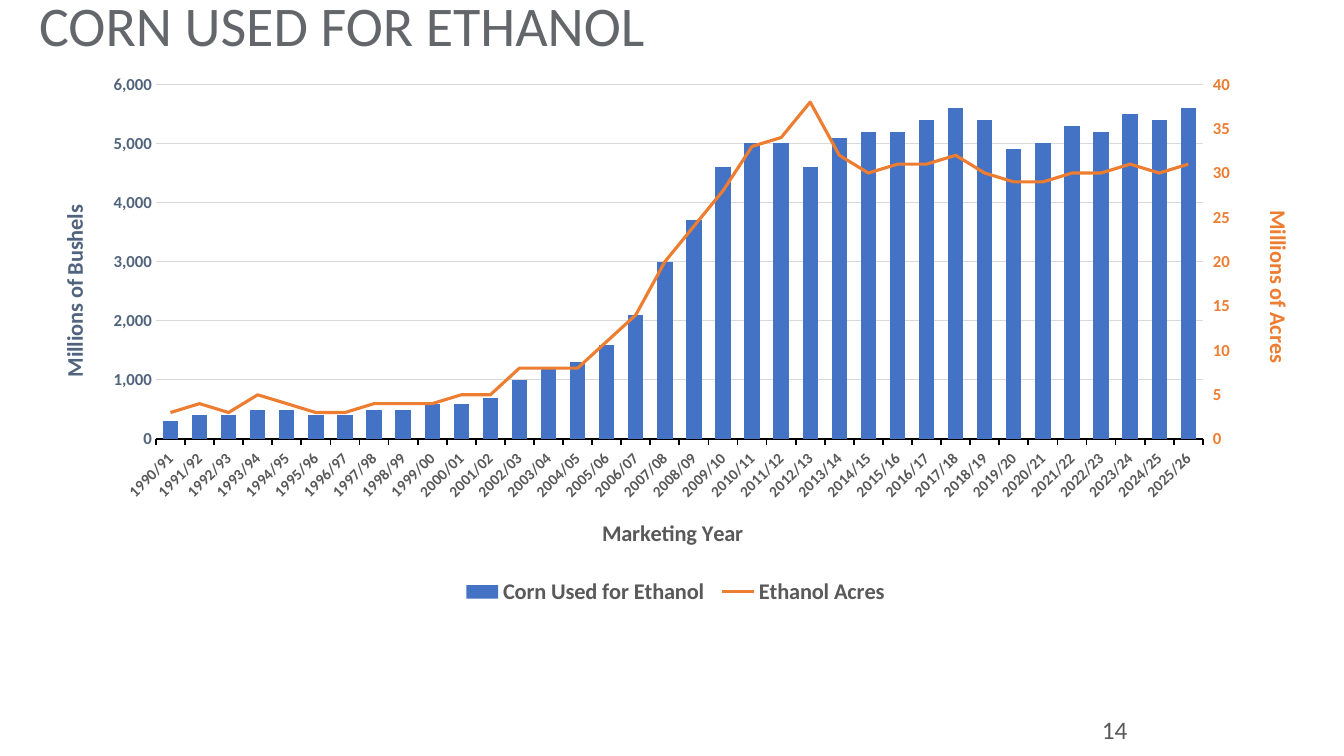
import pptx
import pptx.chart.axis
import pptx.chart.data
import pptx.dml.color
import pptx.enum.chart
import pptx.enum.text
import pptx.oxml
import pptx.oxml.ns
import pptx.util

Inches = pptx.util.Inches
Pt = pptx.util.Pt
RGBColor = pptx.dml.color.RGBColor
XL = pptx.enum.chart
ANCHOR = pptx.enum.text.MSO_ANCHOR

TITLE_GREY = RGBColor(0x63, 0x66, 0x6A)
TEXT_GREY = RGBColor(0x59, 0x59, 0x59)
GRID_GREY = RGBColor(0xD9, 0xD9, 0xD9)
SLATE = RGBColor(0x51, 0x64, 0x7E)
BLUE = RGBColor(0x44, 0x72, 0xC4)
ORANGE = RGBColor(0xED, 0x7D, 0x31)
BLACK = RGBColor(0, 0, 0)

YEARS = [f"{y}/{(y + 1) % 100:02d}" for y in range(1990, 2026)]
BUSHELS = [
    300, 400, 400, 500, 500, 400, 400, 500, 500, 600, 600, 700,
    1000, 1200, 1300, 1600, 2100, 3000, 3700, 4600, 5000, 5000, 4600, 5100,
    5200, 5200, 5400, 5600, 5400, 4900, 5000, 5300, 5200, 5500, 5400, 5600,
]
ACRES = [
    3, 4, 3, 5, 4, 3, 3, 4, 4, 4, 5, 5,
    8, 8, 8, 11, 14, 20, 24, 28, 33, 34, 38, 32,
    30, 31, 31, 32, 30, 29, 29, 30, 30, 31, 30, 31,
]

NS = pptx.oxml.ns.nsdecls("c")
LINE_PLOT = f"""<c:lineChart {NS}><c:grouping val="standard"/><c:varyColors val="0"/>
<c:marker val="1"/><c:axId val="501"/><c:axId val="502"/></c:lineChart>"""
HIDDEN_AXIS = f"""<c:catAx {NS}><c:axId val="501"/><c:scaling/><c:delete val="1"/>
<c:axPos val="b"/><c:crossAx val="502"/></c:catAx>"""
RIGHT_AXIS = f"""<c:valAx {NS}><c:axId val="502"/><c:scaling/><c:delete val="0"/>
<c:axPos val="r"/><c:numFmt formatCode="General" sourceLinked="0"/>
<c:majorTickMark val="out"/><c:minorTickMark val="none"/><c:tickLblPos val="nextTo"/>
<c:crossAx val="501"/><c:crosses val="max"/></c:valAx>"""


def set_all(obj, values):
    for name, value in values.items():
        setattr(obj, name, value)


def set_font(font, size, color, bold=False):
    set_all(font, {"name": "Calibri", "size": Pt(size), "bold": bold})
    font.color.rgb = color


def set_line(line, color, width):
    line.color.rgb = color
    line.width = Pt(width)


def place(element, x, y, w=None, h=None, inner=False):
    for old in element.xpath("c:layout"):
        element.remove(old)
    parts = {"xMode": "edge", "yMode": "edge", "x": x, "y": y, "w": w, "h": h}
    body = '<c:layoutTarget val="inner"/>' if inner else ""
    body += "".join(f'<c:{k} val="{v}"/>' for k, v in parts.items() if v is not None)
    layout = pptx.oxml.parse_xml(
        f"<c:layout {NS}><c:manualLayout>{body}</c:manualLayout></c:layout>")
    overlay = element.xpath("c:overlay")
    if overlay:
        overlay[0].addprevious(layout)
    else:
        element.insert(0, layout)


def add_text(s, box, text, size, color, anchor, **spacing):
    tf = s.shapes.add_textbox(*map(Inches, box)).text_frame
    set_all(tf, {"word_wrap": True, "vertical_anchor": anchor})
    p = tf.paragraphs[0]
    set_all(p, {"line_spacing": 0.9, **spacing})
    r = p.add_run()
    r.text = text
    set_font(r.font, size, color)


def style_axis(axis, title, color, size, x, y, rotation, top=None, step=None):
    tf = axis.axis_title.text_frame
    tf.text = title
    set_font(tf.paragraphs[0].runs[0].font, 16, color, True)
    title_xml = axis.axis_title._element
    title_xml.xpath(".//a:bodyPr")[0].set("rot", str(rotation * 60000))
    place(title_xml, x, y)
    set_font(axis.tick_labels.font, size, color, True)
    if top:
        set_all(axis, {"minimum_scale": 0, "maximum_scale": top, "major_unit": step})
        axis.format.line.fill.background()


def add_line_plot(chart):
    area = chart._chartSpace.chart.plotArea
    bar = area.xpath("c:barChart")[0]
    acres = bar.xpath("c:ser")[1]
    for flag in acres.xpath("c:invertIfNegative"):
        acres.remove(flag)
    line = pptx.oxml.parse_xml(LINE_PLOT)
    line.xpath("c:marker")[0].addprevious(acres)
    bar.addnext(line)
    right = pptx.oxml.parse_xml(RIGHT_AXIS)
    last = area.xpath("c:valAx")[-1]
    last.addnext(right)
    last.addnext(pptx.oxml.parse_xml(HIDDEN_AXIS))
    place(area, 0.098, 0.038, 0.81, 0.646, inner=True)
    return pptx.chart.axis.ValueAxis(right)


def add_ethanol_chart(s):
    data = pptx.chart.data.CategoryChartData()
    data.categories = YEARS
    data.add_series("Corn Used for Ethanol", BUSHELS)
    data.add_series("Ethanol Acres", ACRES)
    box = map(Inches, (0.29, 0.63, 12.82, 5.45))
    chart = s.shapes.add_chart(XL.XL_CHART_TYPE.COLUMN_CLUSTERED, *box, data).chart
    chart.has_title = False
    set_font(chart.font, 10, BLACK)
    years, left = chart.category_axis, chart.value_axis
    right = add_line_plot(chart)

    bars, lines = chart.plots
    set_all(bars, {"gap_width": 89, "overlap": 22, "vary_by_categories": False})
    fill = bars.series[0].format.fill
    fill.solid()
    fill.fore_color.rgb = BLUE
    acres = lines.series[0]
    acres.smooth = False
    acres.marker.style = XL.XL_MARKER_STYLE.NONE
    set_line(acres.format.line, ORANGE, 2.25)

    style_axis(years, "Marketing Year", TEXT_GREY, 11, 0.44, 0.82, 0)
    style_axis(left, "Millions of Bushels", SLATE, 12, 0.02, 0.25, -90, 6000, 1000)
    style_axis(right, "Millions of Acres", ORANGE, 12, 0.95, 0.26, 90, 40, 5)
    years._element.xpath("c:txPr/a:bodyPr")[0].set("rot", str(-45 * 60000))
    years.major_tick_mark = XL.XL_TICK_MARK.OUTSIDE
    set_line(years.format.line, BLACK, 1.25)
    left.major_tick_mark = XL.XL_TICK_MARK.NONE
    set_all(left.tick_labels, {"number_format": "#,##0", "number_format_is_linked": False})
    set_line(left.major_gridlines.format.line, GRID_GREY, 0.75)

    chart.has_legend = True
    legend = chart.legend
    set_all(legend, {"position": XL.XL_LEGEND_POSITION.BOTTOM, "include_in_layout": False})
    set_font(legend.font, 16, TEXT_GREY, True)
    place(legend._element, 0.33, 0.94, 0.34, 0.06)


def main():
    prs = pptx.Presentation()
    set_all(prs, {"slide_width": Inches(13.33), "slide_height": Inches(7.5)})
    s = prs.slides.add_slide(prs.slide_layouts[6])
    add_text(s, (0.29, 0.17, 7, 0.46), "CORN USED FOR ETHANOL", 40, TITLE_GREY,
             ANCHOR.BOTTOM)
    add_ethanol_chart(s)
    add_text(s, (10.83, 7.06, 1.43, 0.4), "14", 18, TEXT_GREY, ANCHOR.MIDDLE,
             space_after=Pt(6))
    prs.save("out.pptx")


if __name__ == "__main__":
    main()
